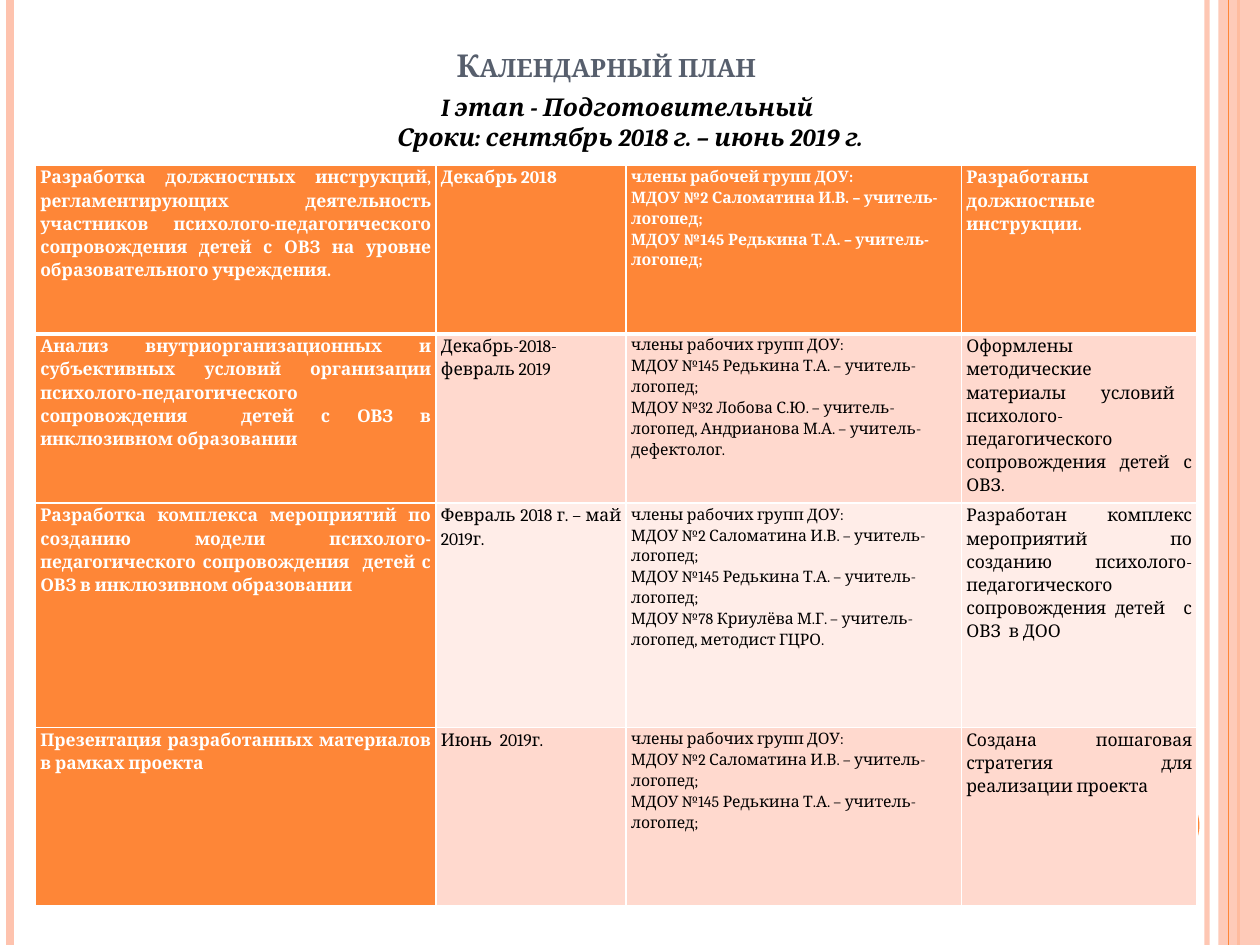
from lxml import etree
from pptx import Presentation
from pptx.dml.color import RGBColor
from pptx.enum.shapes import MSO_CONNECTOR, MSO_SHAPE
from pptx.enum.text import MSO_ANCHOR, PP_ALIGN
from pptx.oxml.ns import qn
from pptx.util import Inches, Pt

STRAIGHT = MSO_CONNECTOR.STRAIGHT
RECTANGLE, OVAL = MSO_SHAPE.RECTANGLE, MSO_SHAPE.OVAL
MIDDLE = MSO_ANCHOR.MIDDLE
LEFT, CENTER, JUSTIFY = PP_ALIGN.LEFT, PP_ALIGN.CENTER, PP_ALIGN.JUSTIFY

FONT = "Cambria"
COLORS = {
    "orange": "FE8637",
    "peach": "FEC3AE",
    "band": "FFD9CE",
    "pale": "FFEDE8",
    "slate": "575F6D",
    "black": "000000",
    "white": "FFFFFF",
}
COLUMN_WIDTHS = [3.18, 1.51, 2.66, 1.87]
ROW_HEIGHTS = [1.34, 1.34, 1.78, 1.42]
ROW_FILLS = ["orange", "band", "pale", "band"]

GROUPS = "члены рабочих групп ДОУ:"
SALOMATINA = "МДОУ №2 Саломатина И.В. – учитель-логопед;"
REDKINA = "МДОУ №145 Редькина Т.А. – учитель-логопед;"
PLAN = [
    [
        ["Разработка должностных инструкций, регламентирующих деятельность участников "
         "психолого-педагогического сопровождения детей с ОВЗ на уровне образовательного учреждения."],
        ["Декабрь 2018"],
        ["члены рабочей групп ДОУ:", SALOMATINA, REDKINA],
        ["Разработаны должностные инструкции."],
    ],
    [
        ["Анализ внутриорганизационных и субъективных условий организации "
         "психолого-педагогического сопровождения  детей с ОВЗ в инклюзивном образовании"],
        ["Декабрь-2018- февраль 2019"],
        [GROUPS, REDKINA,
         "МДОУ №32 Лобова С.Ю. – учитель-логопед, Андрианова М.А. – учитель-дефектолог."],
        ["Оформлены методические материалы  условий  психолого-педагогического "
         "сопровождения детей с ОВЗ. "],
    ],
    [
        ["Разработка комплекса мероприятий по созданию модели психолого-педагогического "
         "сопровождения  детей с ОВЗ в инклюзивном образовании"],
        ["Февраль 2018 г. – май 2019г."],
        [GROUPS, SALOMATINA, REDKINA,
         "МДОУ №78 Криулёва М.Г. – учитель-логопед, методист ГЦРО."],
        ["Разработан комплекс мероприятий по созданию психолого-педагогического "
         "сопровождения детей  с ОВЗ  в ДОО"],
    ],
    [
        ["Презентация разработанных материалов в рамках проекта"],
        ["Июнь  2019г."],
        [GROUPS, SALOMATINA, REDKINA],
        ["Создана пошаговая стратегия для реализации проекта"],
    ],
]


def color(name):
    return RGBColor.from_string(COLORS[name])


def set_opacity(element, percent):
    for tint in element.iter(qn("a:srgbClr")):
        etree.SubElement(tint, qn("a:alpha"), val=str(percent * 1000))


def write_text(frame, lines, *, size, tint, bold=False, italic=False,
               small_caps=False, align=LEFT, spacing=None, after=0):
    for index, line in enumerate(lines):
        para = frame.add_paragraph() if index else frame.paragraphs[0]
        para.alignment = align
        para.space_after = Pt(after)
        if spacing:
            para.line_spacing = spacing
        span = para.add_run()
        span.text = line
        span.font.name = FONT
        span.font.size = Pt(size)
        span.font.bold = bold
        span.font.italic = italic
        span.font.color.rgb = color(tint)
        if small_caps:
            span._r.get_or_add_rPr().set("cap", "small")


def add_stripe(page, x, tint, width, opacity=100):
    line = page.shapes.add_connector(STRAIGHT, Inches(x), 0, Inches(x), Inches(7.5))
    line.line.color.rgb = color(tint)
    line.line.width = Pt(width)
    properties = line._element.spPr
    if opacity < 100:
        set_opacity(properties, opacity)
    etree.SubElement(properties, qn("a:effectLst"))


def add_block(page, kind, place, tint, opacity=100):
    block = page.shapes.add_shape(kind, *map(Inches, place))
    block.shadow.inherit = False
    block.fill.solid()
    block.fill.fore_color.rgb = color(tint)
    block.line.fill.background()
    if opacity < 100:
        set_opacity(block._element.spPr, opacity)


def add_text_box(page, place, lines, wrap=True, **style):
    box = page.shapes.add_textbox(*map(Inches, place))
    frame = box.text_frame
    frame.word_wrap = wrap
    frame.vertical_anchor = MIDDLE
    write_text(frame, lines, align=CENTER, **style)


def set_borders(cell, bottom):
    properties = cell._tc.get_or_add_tcPr()
    for side, width in (("L", 1), ("R", 1), ("T", 1), ("B", bottom)):
        border = etree.SubElement(properties, qn(f"a:ln{side}"), w=str(Pt(width)))
        fill = etree.SubElement(border, qn("a:solidFill"))
        etree.SubElement(fill, qn("a:srgbClr"), val=COLORS["white"])


def fill_cell(cell, lines, row, column):
    heading = row == 0 or column == 0
    cell.margin_left = cell.margin_right = Inches(0.04)
    cell.margin_top = cell.margin_bottom = 0
    set_borders(cell, bottom=3 if row == 0 else 1)
    cell.fill.solid()
    cell.fill.fore_color.rgb = color("orange" if heading else ROW_FILLS[row])
    write_text(
        cell.text_frame, lines,
        size=9 if column == 2 else 10,
        tint="white" if heading else "black",
        bold=heading,
        align=LEFT if column == 2 else JUSTIFY,
        spacing=1.15,
        after=10 if column < 2 else 0,
    )


def add_plan_table(page):
    table = page.shapes.add_table(
        len(ROW_HEIGHTS), len(COLUMN_WIDTHS), Inches(0.28), Inches(1.31),
        Inches(sum(COLUMN_WIDTHS)), Inches(sum(ROW_HEIGHTS))).table
    for column, width in zip(table.columns, COLUMN_WIDTHS):
        column.width = Inches(width)
    for row, height in zip(table.rows, ROW_HEIGHTS):
        row.height = Inches(height)
    for row, entries in enumerate(PLAN):
        for column, lines in enumerate(entries):
            fill_cell(table.cell(row, column), lines, row, column)


def main():
    deck = Presentation()
    deck.slide_width, deck.slide_height = Inches(10), Inches(7.5)
    page = deck.slides.add_slide(deck.slide_layouts[6])

    add_stripe(page, 9.58, "peach", 3, opacity=93)
    add_stripe(page, 0.08, "peach", 4.5)
    add_stripe(page, 9.83, "orange", 1.5)
    add_block(page, RECTANGLE, (9.67, 0, 0.33, 7.5), "peach", opacity=87)
    add_stripe(page, 9.75, "orange", 0.75)
    add_block(page, OVAL, (8.92, 6.25, 0.6, 0.6), "orange")

    add_text_box(page, (0.75, 0.21, 8.17, 0.61), ["Календарный план "],
                 size=18, tint="slate", bold=True, small_caps=True)
    add_plan_table(page)
    add_text_box(page, (2.93, 0.68, 4.14, 0.57),
                 ["I этап - Подготовительный ", "Сроки: сентябрь 2018 г. – июнь 2019 г."],
                 wrap=False, size=14, tint="black", bold=True, italic=True)
    deck.save("out.pptx")


if __name__ == "__main__":
    main()
